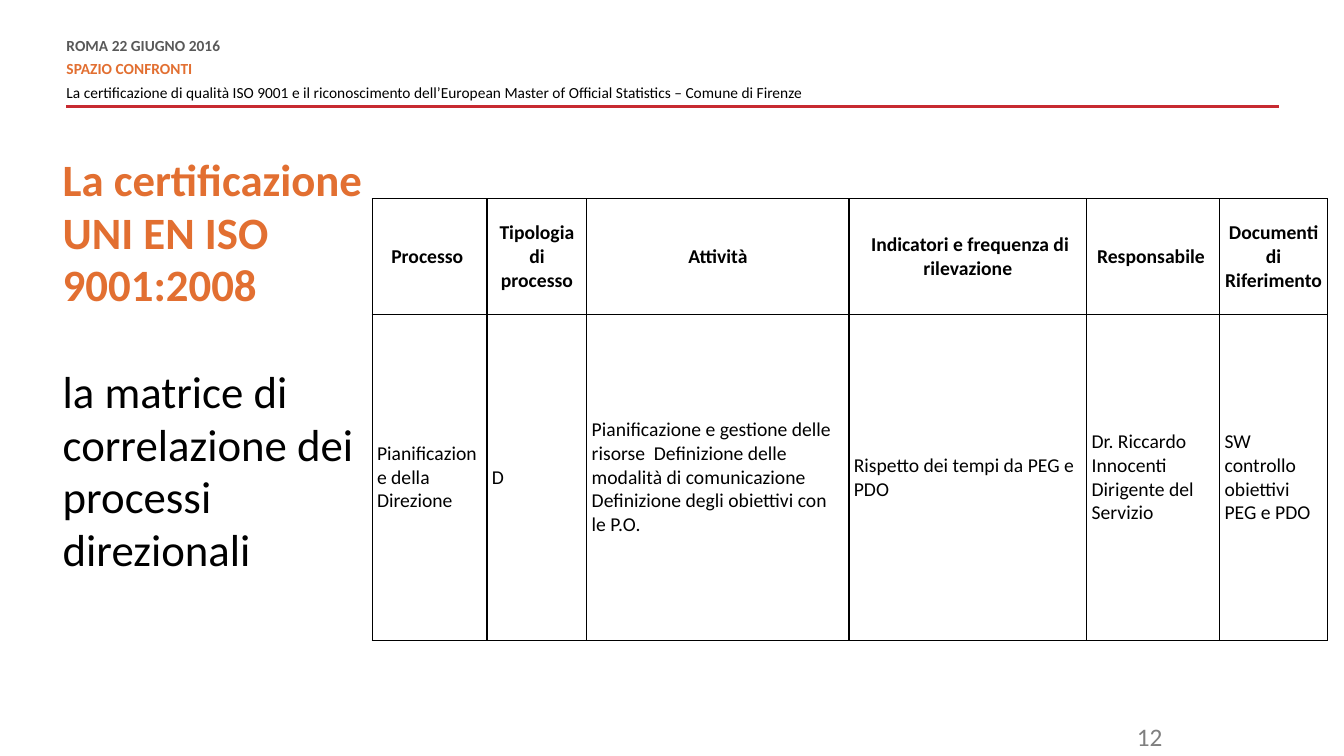
from lxml import etree
from pptx import Presentation
from pptx.dml.color import RGBColor
from pptx.enum.shapes import MSO_CONNECTOR
from pptx.enum.text import MSO_ANCHOR, MSO_AUTO_SIZE, PP_ALIGN
from pptx.oxml.ns import qn
from pptx.util import Pt

LEFT, CENTER, RIGHT = PP_ALIGN.LEFT, PP_ALIGN.CENTER, PP_ALIGN.RIGHT
TOP, MIDDLE = MSO_ANCHOR.TOP, MSO_ANCHOR.MIDDLE
STRAIGHT = MSO_CONNECTOR.STRAIGHT
NO_FIT = MSO_AUTO_SIZE.NONE

COLORS = {"orange": "E26F31", "red": "C72A31", "dark": "595959",
          "gray": "7F7F7F", "black": "000000"}
FONT = "Calibri"

HEADER = [
    ("ROMA 22 GIUGNO 2016", "dark", True),
    ("SPAZIO CONFRONTI", "orange", True),
    ("La certificazione di qualità ISO 9001 e il riconoscimento "
     "dell’European Master of Official Statistics – Comune di Firenze",
     "black", False),
]
TITLE = [
    ("La certificazione UNI EN ISO 9001:2008", "orange", True),
    ("la matrice di correlazione dei processi direzionali", "black", False),
]
WIDTHS = [82.1, 71.3, 187.2, 169.9, 95, 77]
HEIGHTS = [82.8, 232.6]
ROWS = [
    ["Processo ", "Tipologia di processo", "Attività",
     " Indicatori e frequenza di rilevazione", "Responsabile ",
     "Documenti di Riferimento"],
    ["Pianificazione della Direzione", "D",
     "Pianificazione e gestione delle risorse  Definizione delle modalità "
     "di comunicazione  Definizione degli obiettivi con le P.O.",
     "Rispetto dei tempi da PEG e PDO",
     "Dr. Riccardo Innocenti  Dirigente del Servizio",
     "SW controllo obiettivi PEG e PDO"],
]


class Deck:
    def __init__(self):
        self.prs = Presentation()
        self.prs.slide_width, self.prs.slide_height = Pt(960), Pt(540)
        self.slide = self.prs.slides.add_slide(self.prs.slide_layouts[5])

    def fill(self, frame, lines, size, align=LEFT, pitch=None, before=0, after=0):
        """Write one paragraph per (text, color, bold) line."""
        frame.word_wrap = True
        for i, (text, color, bold) in enumerate(lines):
            par = frame.paragraphs[0] if i == 0 else frame.add_paragraph()
            par.alignment = align
            par.line_spacing = pitch
            par.space_before = Pt(before if i else 0)
            par.space_after = Pt(after)
            run = par.add_run()
            run.text = text
            font = run.font
            font.name, font.size, font.bold = FONT, Pt(size), bold
            font.color.rgb = RGBColor.from_string(COLORS[color])

    def inset(self, item, side, end=0):
        item.margin_left = item.margin_right = Pt(side)
        item.margin_top = item.margin_bottom = Pt(end)

    def title(self, x, y, w, h, lines, size, **style):
        shape = self.slide.shapes.title
        shape.left, shape.top, shape.width, shape.height = map(Pt, (x, y, w, h))
        frame = shape.text_frame
        frame.auto_size, frame.vertical_anchor = NO_FIT, TOP
        self.inset(frame, 0)
        self.fill(frame, lines, size, **style)

    def text(self, x, y, w, h, lines, size, side=0, end=0, **style):
        box = self.slide.shapes.add_textbox(Pt(x), Pt(y), Pt(w), Pt(h))
        self.inset(box.text_frame, side, end)
        self.fill(box.text_frame, lines, size, **style)

    def line(self, x1, y1, x2, y2, color, width):
        rule = self.slide.shapes.add_connector(
            STRAIGHT, Pt(x1), Pt(y1), Pt(x2), Pt(y2))
        rule.line.color.rgb = RGBColor.from_string(COLORS[color])
        rule.line.width = Pt(width)
        etree.SubElement(rule._element.spPr, qn("a:effectLst"))

    def border(self, cell, color, width):
        props = cell._tc.get_or_add_tcPr()
        for i, side in enumerate(("lnL", "lnR", "lnT", "lnB")):
            edge = etree.Element(qn("a:" + side), w=str(Pt(width)))
            paint = etree.SubElement(edge, qn("a:solidFill"))
            etree.SubElement(paint, qn("a:srgbClr"), val=COLORS[color])
            props.insert(i, edge)

    def table(self, x, y, widths, heights, rows, size):
        grid = self.slide.shapes.add_table(
            len(rows), len(widths), Pt(x), Pt(y),
            Pt(sum(widths)), Pt(sum(heights))).table
        grid.first_row = grid.horz_banding = False
        for col, width in zip(grid.columns, widths):
            col.width = Pt(width)
        for r, row in enumerate(rows):
            grid.rows[r].height = Pt(heights[r])
            head = r == 0
            for c, text in enumerate(row):
                cell = grid.cell(r, c)
                cell.fill.background()
                cell.vertical_anchor = MIDDLE
                self.inset(cell, 3.5)
                self.border(cell, "black", 1)
                self.fill(cell.text_frame, [(text, "black", head)], size,
                          align=CENTER if head else LEFT)


def main():
    deck = Deck()
    deck.line(913.5, 76.3, 47.5, 76.3, "red", 2)
    deck.text(47.5, 28, 600.5, 45.4, HEADER, 11, pitch=Pt(10.8), after=6)
    deck.text(621.4, 512, 216, 28.8, [("12", "gray", False)], 18,
              side=7.2, end=3.6, align=RIGHT)
    deck.title(44.8, 110.2, 238.3, 273.6, TITLE, 32, pitch=0.98, before=38.4)
    deck.table(265.8, 141.9, WIDTHS, HEIGHTS, ROWS, 14)
    deck.prs.save("out.pptx")


if __name__ == "__main__":
    main()
